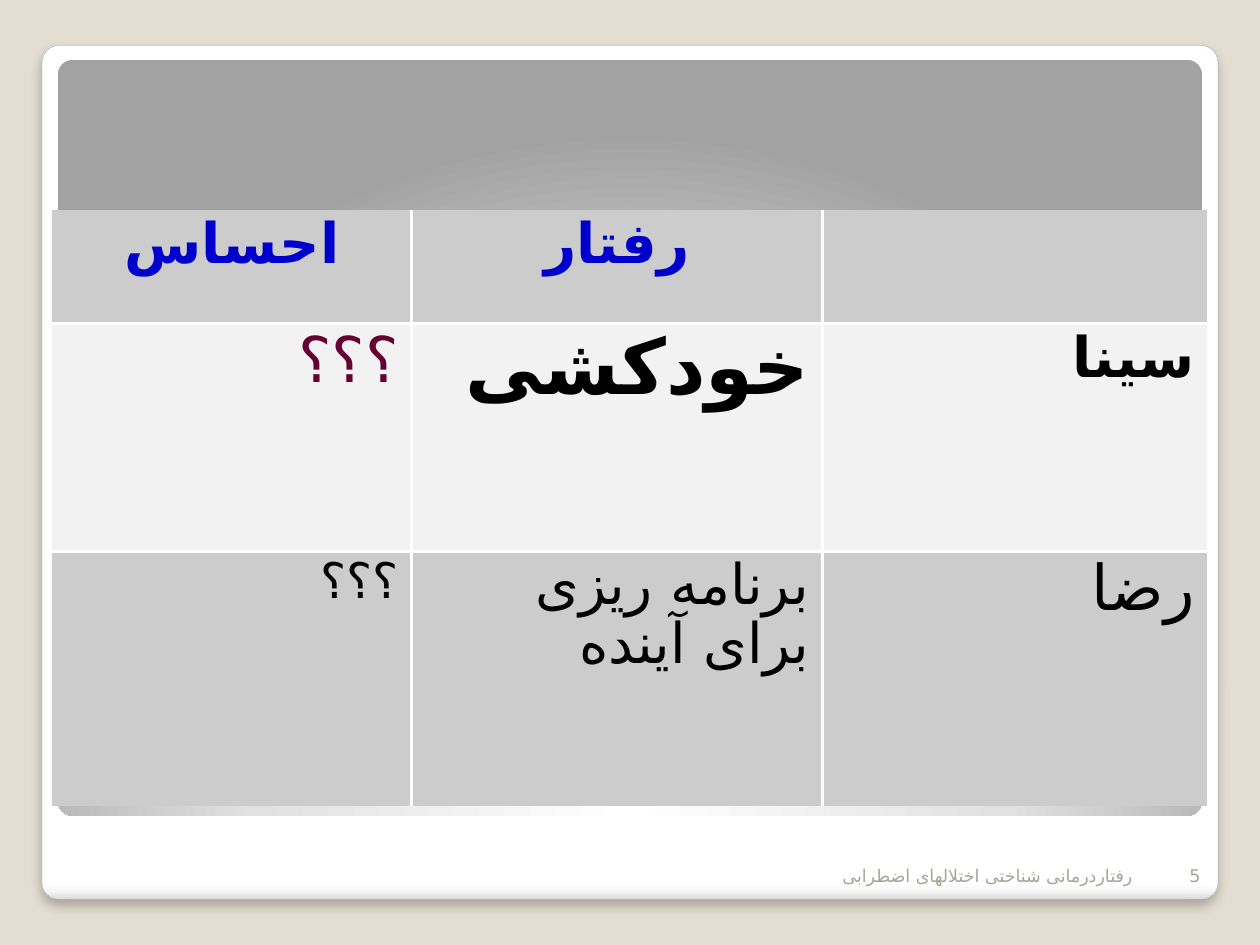
from lxml.etree import SubElement
from pptx import Presentation
from pptx.dml.color import RGBColor
from pptx.enum.shapes import MSO_SHAPE as Shape
from pptx.enum.text import MSO_ANCHOR as Anchor, PP_ALIGN as Align
from pptx.oxml import parse_xml
from pptx.oxml.ns import nsdecls, qn
from pptx.util import Pt


def color(value):
    return RGBColor.from_string(value)


def write(frame, text, size, font_name, font_color, bold=False, align=Align.RIGHT):
    """Put one right-to-left paragraph in a frame and return it."""
    paragraph = frame.paragraphs[0]
    paragraph.text = text
    paragraph.alignment = align
    paragraph.font.size = Pt(size)
    paragraph.font.bold = bold
    paragraph.font.name = font_name
    paragraph.font.color.rgb = color(font_color)
    properties = paragraph._p.get_or_add_pPr()
    properties.set("rtl", "1")
    SubElement(properties.find(qn("a:defRPr")), qn("a:cs"), typeface="DejaVu Sans")
    return paragraph


presentation = Presentation()
presentation.slide_width, presentation.slide_height = Pt(720), Pt(540)
slide = presentation.slides.add_slide(presentation.slide_layouts[6])
slide.background.fill.solid()
slide.background.fill.fore_color.rgb = color("E3DED1")

# Rounded frame and inner panel: box, gradient stops, gradient direction
panels = [
    ((24, 26, 672, 488),
     [(0, "FFFFFF"), (98, "FFFFFF"), (99, "F7F7F7"), (100, "DADADA")],
     '<a:lin ang="5400000" scaled="0"/>'),
    ((33, 34.2, 654, 432),
     [(0, "FFFFFF"), (55, "E1E1E1"), (100, "A2A2A2")],
     '<a:path path="circle"><a:fillToRect l="50000" t="175000" r="50000" b="-75000"/></a:path>'),
]
panel_shapes = []
for box, stops, direction in panels:
    shape = slide.shapes.add_shape(Shape.ROUNDED_RECTANGLE, *map(Pt, box))
    shape.adjustments[0] = 0.02
    shape.shadow.inherit = False
    shape.line.fill.background()
    stop_xml = "".join(
        f'<a:gs pos="{position * 1000}"><a:srgbClr val="{value}"/></a:gs>'
        for position, value in stops)
    shape._element.spPr.find(qn("a:prstGeom")).addnext(parse_xml(
        f'<a:gradFill {nsdecls("a")} rotWithShape="1">'
        f"<a:gsLst>{stop_xml}</a:gsLst>{direction}</a:gradFill>"))
    panel_shapes.append(shape)

# Thin outline and soft shadow of the frame
frame_shape = panel_shapes[0]
frame_shape.line.color.rgb = color("A4A4A4")
frame_shape.line.width = Pt(0.16)
frame_shape._element.spPr.find(qn("a:effectLst")).append(parse_xml(
    f'<a:outerShdw {nsdecls("a")} blurRad="{Pt(6)}" dist="{Pt(4)}" dir="5400000" '
    'algn="t" rotWithShape="0"><a:srgbClr val="000000"><a:alpha val="25000"/>'
    "</a:srgbClr></a:outerShdw>"))

# Table: text, size, colour, bold, alignment of each cell
rows = [
    [("احساس", 32, "0000CC", True, Align.CENTER),
     ("رفتار", 32, "0000CC", True, Align.CENTER),
     None],
    [("؟؟؟", 36, "660033", False, Align.RIGHT),
     ("خودکشی", 44, "000000", True, Align.RIGHT),
     ("سینا", 32, "000000", True, Align.RIGHT)],
    [("؟؟؟", 28, "000000", False, Align.RIGHT),
     ("برنامه ریزی برای آینده", 32, "000000", False, Align.RIGHT),
     ("رضا", 36, "000000", False, Align.RIGHT)],
]
column_widths = [205, 235, 220]
row_heights = [65, 130, 145.5]
table = slide.shapes.add_table(
    3, 3, Pt(30), Pt(120), Pt(sum(column_widths)), Pt(sum(row_heights))).table
for column, width in zip(table.columns, column_widths):
    column.width = Pt(width)
for row, height in zip(table.rows, row_heights):
    row.height = Pt(height)

for row_index, row in enumerate(rows):
    for column_index, content in enumerate(row):
        cell = table.cell(row_index, column_index)
        cell.fill.solid()
        cell.fill.fore_color.rgb = color("F2F2F2" if row_index == 1 else "CCCCCC")
        # White lines between cells only
        inner_sides = {"lnL": column_index > 0, "lnR": column_index < 2,
                       "lnT": row_index > 0, "lnB": row_index < 2}
        for position, (side, inner) in enumerate(inner_sides.items()):
            paint = ('<a:solidFill><a:srgbClr val="FFFFFF"/></a:solidFill>'
                     if inner else "<a:noFill/>")
            cell._tc.get_or_add_tcPr().insert(position, parse_xml(
                f'<a:{side} {nsdecls("a")} w="{Pt(2)}">{paint}</a:{side}>'))
        if content:
            text, size, font_color, bold, align = content
            paragraph = write(
                cell.text_frame, text, size, "DejaVu Sans", font_color, bold, align)
            paragraph._p.get_or_add_pPr().insert(0, parse_xml(
                f'<a:spcBef {nsdecls("a")}><a:spcPct val="20000"/></a:spcBef>'))
            paragraph.line_spacing = 0.9

# Slide number and footer
for left, width, text in [(657, 36, "5"),
                          (474, 180, "رفتاردرمانی شناختی اختلالهای اضطرابی")]:
    text_frame = slide.shapes.add_textbox(Pt(left), Pt(481), Pt(width), Pt(29)).text_frame
    text_frame.word_wrap = True
    text_frame.vertical_anchor = Anchor.BOTTOM
    write(text_frame, text, 10, "Arial", "A8A49B")

presentation.save("out.pptx")
